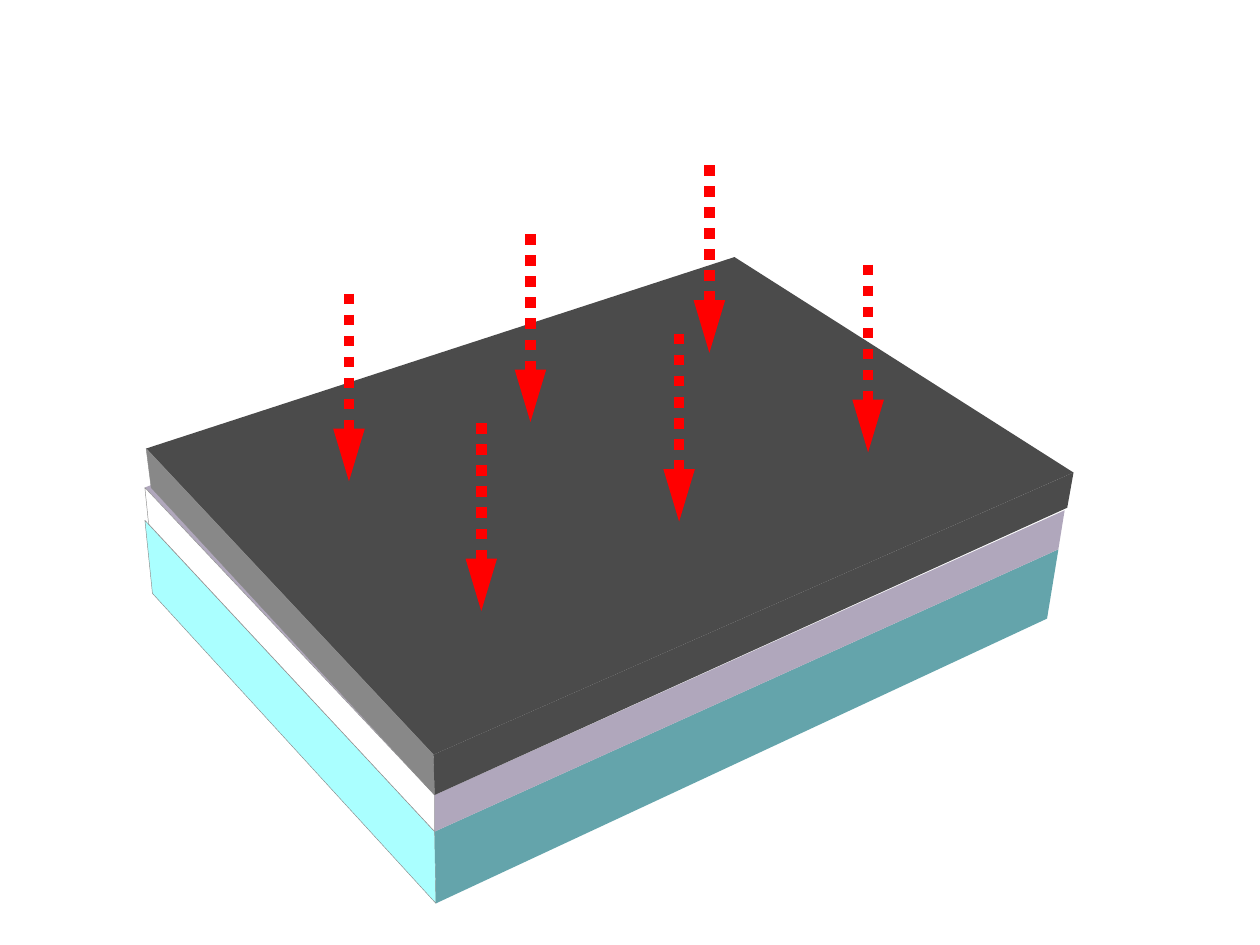
from lxml import etree
from pptx import Presentation
from pptx.dml.color import RGBColor
from pptx.enum.dml import MSO_LINE
from pptx.enum.shapes import MSO_CONNECTOR
from pptx.oxml.ns import qn
from pptx.util import Inches, Pt

STRAIGHT = MSO_CONNECTOR.STRAIGHT
DOTTED = MSO_LINE.ROUND_DOT  # square dots: sysDot in the file
BLANK_LAYOUT = 6

COLORS = {
    "cover_top": "4B4B4B", "cover_side": "888888", "cover_front": "4B4B4B",
    "middle_top": "B0A7BC", "middle_side": "FFFFFF", "middle_front": "B0A7BC",
    "base_side": "AAFFFF", "base_front": "64A4AB",
    "edge": "8A8A8A", "arrow": "FF0000",
}

# Upper corners (left, front, right), then lower corners (left, front, right)
SLABS = {
    "base": [(1.15, 4.13), (3.45, 6.6), (8.4, 4.36),
             (1.21, 4.71), (3.46, 7.17), (8.31, 4.91)],
    "middle": [(1.15, 3.87), (3.45, 6.31), (8.45, 4.05),
               (1.18, 4.16), (3.45, 6.6), (8.4, 4.36)],
    "cover": [(1.16, 3.56), (3.44, 5.99), (8.52, 3.75),
              (1.2, 3.87), (3.45, 6.31), (8.47, 4.03)],
}
# Visible part of each upper face
TOPS = {
    "middle": [(1.15, 3.87), (1.2, 3.85), (3.45, 6.31)],
    "cover": [(1.16, 3.56), (5.83, 2.04), (8.52, 3.75), (3.44, 5.99)],
}

ARROW_LENGTH = 1.49
ARROW_STARTS = [(2.77, 2.33), (4.21, 1.86), (5.63, 1.31),
                (3.82, 3.36), (5.39, 2.65), (6.89, 2.1)]


class SlideBuilder:
    def __init__(self, slide):
        self.slide = slide
        self.arrow_format = {"width": Pt(6), "dash_style": DOTTED}
        self.arrowhead = {"type": "triangle", "w": "med", "len": "lg"}

    def color(self, name):
        return RGBColor.from_string(COLORS[name])

    def face(self, name, corners, edged=False):
        points = [(Inches(x), Inches(y)) for x, y in corners]
        builder = self.slide.shapes.build_freeform(*points[0])
        builder.add_line_segments(points[1:], close=True)
        shape = builder.convert_to_shape()
        shape.shadow.inherit = False
        shape.fill.solid()
        shape.fill.fore_color.rgb = self.color(name)
        if edged:
            shape.line.color.rgb = self.color("edge")
            shape.line.width = Pt(0.25)
        else:
            shape.line.fill.background()

    def slab(self, name, corners):
        """Draw a box from its visible faces."""
        left, front, right, low_left, low_front, low_right = corners
        if name in TOPS:
            self.face(f"{name}_top", TOPS[name])
        self.face(f"{name}_side", [left, front, low_front, low_left], edged=True)
        self.face(f"{name}_front", [front, right, low_right, low_front])

    def down_arrow(self, x, y):
        connector = self.slide.shapes.add_connector(
            STRAIGHT, Inches(x), Inches(y), Inches(x), Inches(y + ARROW_LENGTH))
        line = connector.line
        line.color.rgb = self.color("arrow")
        for attribute, value in self.arrow_format.items():
            setattr(line, attribute, value)
        properties = connector.element.spPr
        outline = properties.find(qn("a:ln"))
        etree.SubElement(outline, qn("a:tailEnd"), self.arrowhead)
        etree.SubElement(properties, qn("a:effectLst"))


def main():
    presentation = Presentation()
    presentation.slide_width = Inches(10)
    presentation.slide_height = Inches(7.5)
    layout = presentation.slide_layouts[BLANK_LAYOUT]
    builder = SlideBuilder(presentation.slides.add_slide(layout))
    for name, corners in SLABS.items():
        builder.slab(name, corners)
    for x, y in ARROW_STARTS:
        builder.down_arrow(x, y)
    presentation.save("out.pptx")


if __name__ == "__main__":
    main()
